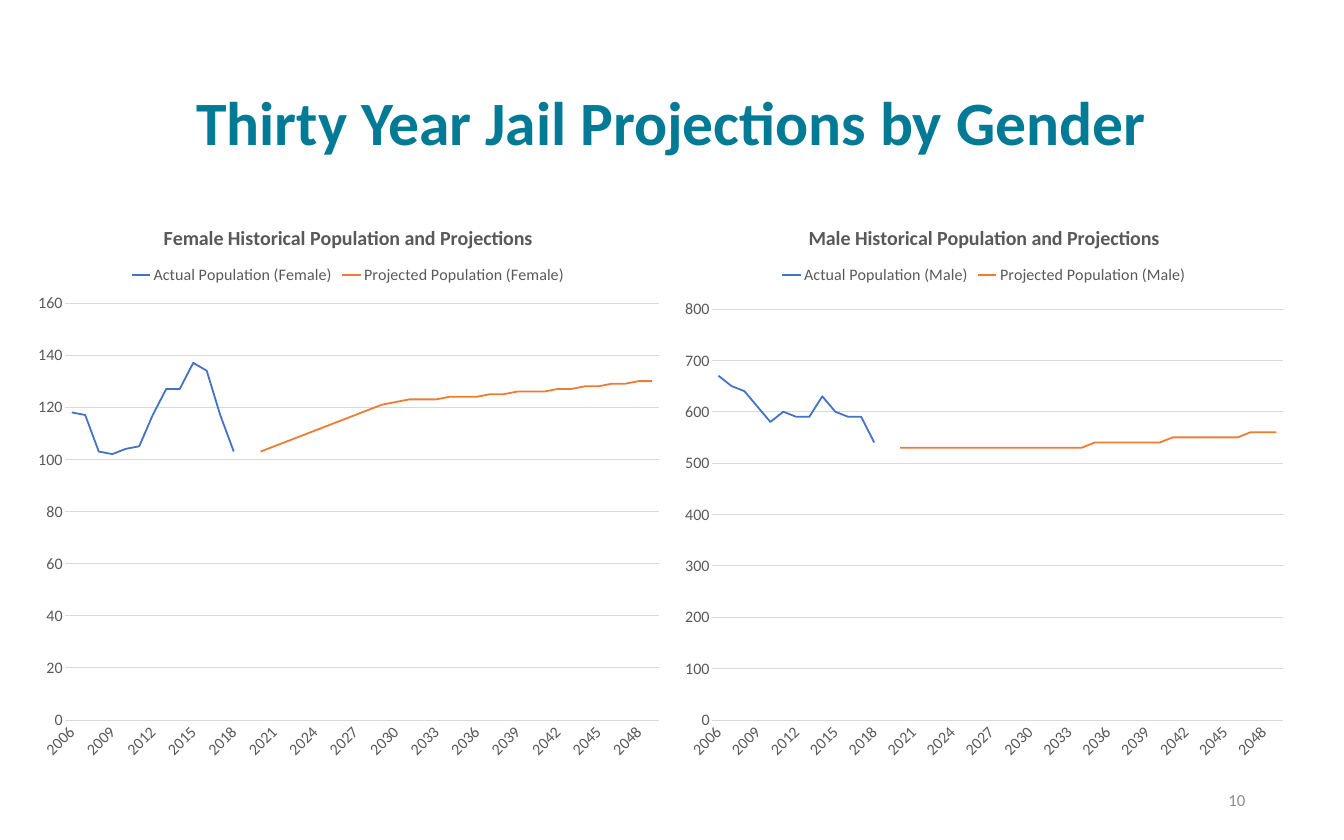
from lxml import etree
from pptx import Presentation
from pptx import util as u
from pptx.chart import data as chart_data
from pptx.dml import color
from pptx.enum import chart as chart_enum
from pptx.enum import text
from pptx.oxml import ns

PX = 15875  # EMU per px
FONT = "Calibri"
COLORS = {
    "title": "007A95",
    "label": "595959",
    "grid": "D9D9D9",
    "number": "8C8C8C",
    "actual": "4472C4",
    "projected": "ED7D31",
}
YEARS = range(2006, 2050)
FIRST_PROJECTED = 2020


def style_font(font, size, color_name, bold=False):
    font.name = FONT
    font.size = u.Pt(size)
    font.bold = bold
    font.color.rgb = color.RGBColor.from_string(COLORS[color_name])


def add_text(words, box, size, color_name, alignment, bold=False):
    shape = slide.shapes.add_textbox(*[length * PX for length in box])
    frame = shape.text_frame
    frame.word_wrap = True
    frame.vertical_anchor = text.MSO_ANCHOR.MIDDLE
    frame.text = words
    paragraph = frame.paragraphs[0]
    paragraph.alignment = alignment
    paragraph.line_spacing = 0.9
    style_font(paragraph.runs[0].font, size, color_name, bold)


presentation = Presentation()
presentation.slide_width = 1344 * PX
presentation.slide_height = 840 * PX
slide = presentation.slides.add_slide(presentation.slide_layouts[6])

# Title
add_text("Thirty Year Jail Projections by Gender", (92, 45, 1159, 162),
         77, "title", text.PP_ALIGN.CENTER, bold=True)

# Chart and plot boxes are left, top, width, height in px
charts = [
    {
        "gender": "Male", "box": (672, 207, 624, 563), "plot": (712, 309, 571, 411),
        "maximum": 800, "step": 100,
        "actual": [670, 650, 640, 610, 580, 600, 590, 590, 630, 600, 590, 590, 540],
        "projected": [530] * 15 + [540] * 6 + [550] * 6 + [560] * 3,
    },
    {
        "gender": "Female", "box": (24, 207, 648, 563), "plot": (65, 303, 594, 417),
        "maximum": 160, "step": 20,
        "actual": [118, 117, 103, 102, 104, 105, 117, 127, 127, 137, 134, 117, 103],
        "projected": [*range(103, 122, 2), 122, 123, 123, 123, 124, 124, 124, 125, 125, 126,
                      126, 126, 127, 127, 128, 128, 129, 129, 130, 130],
    },
]

for item in charts:
    # Data
    population = chart_data.CategoryChartData()
    population.categories = [str(year) for year in YEARS]
    gap = [None] * (FIRST_PROJECTED - YEARS[0])
    actual = item["actual"] + [None] * (len(YEARS) - len(item["actual"]))
    population.add_series(f"Actual Population ({item['gender']})", actual)
    population.add_series(f"Projected Population ({item['gender']})", gap + item["projected"])
    frame = slide.shapes.add_chart(chart_enum.XL_CHART_TYPE.LINE,
                                   *[length * PX for length in item["box"]], population)
    chart = frame.chart
    chart.font.name = FONT

    # Chart title and legend
    chart.has_title = True
    chart.chart_title.include_in_layout = False
    title = chart.chart_title.text_frame
    title.text = f"{item['gender']} Historical Population and Projections"
    style_font(title.paragraphs[0].runs[0].font, 25, "label", bold=True)
    chart.has_legend = True
    chart.legend.position = chart_enum.XL_LEGEND_POSITION.TOP
    chart.legend.include_in_layout = False
    style_font(chart.legend.font, 20, "label")

    # Lines
    chart.plots[0].vary_by_categories = False
    for series, color_name in zip(chart.plots[0].series, ("actual", "projected")):
        series.smooth = False
        series.format.line.width = u.Pt(2.25)
        series.format.line.color.rgb = color.RGBColor.from_string(COLORS[color_name])

    # Axes
    years, values = chart.category_axis, chart.value_axis
    for axis in (years, values):
        axis.major_tick_mark = axis.minor_tick_mark = chart_enum.XL_TICK_MARK.NONE
        style_font(axis.tick_labels.font, 20, "label")
    values.minimum_scale = 0
    values.maximum_scale = item["maximum"]
    values.major_unit = item["step"]
    values.format.line.fill.background()
    for line in (years.format.line, values.major_gridlines.format.line):
        line.width = u.Pt(0.75)
        line.color.rgb = color.RGBColor.from_string(COLORS["grid"])

    # Slanted label for every third year
    years_xml = years._element
    years_xml.find(ns.qn("c:txPr")).find(ns.qn("a:bodyPr")).set("rot", "-2700000")
    skip = etree.Element(ns.qn("c:tickLblSkip"), val="3")
    years_xml.find(ns.qn("c:noMultiLvlLbl")).addprevious(skip)

    # Plot position as fractions of the chart
    left, top, width, height = item["box"]
    plot_left, plot_top, plot_width, plot_height = item["plot"]
    settings = {
        "layoutTarget": "inner", "xMode": "edge", "yMode": "edge",
        "x": (plot_left - left) / width, "y": (plot_top - top) / height,
        "w": plot_width / width, "h": plot_height / height,
    }
    plot_area = chart._chartSpace.chart.plotArea
    for old_layout in plot_area.findall(ns.qn("c:layout")):
        plot_area.remove(old_layout)
    layout = etree.Element(ns.qn("c:layout"))
    manual = etree.SubElement(layout, ns.qn("c:manualLayout"))
    for name, value in settings.items():
        etree.SubElement(manual, ns.qn(f"c:{name}"), val=str(value))
    plot_area.insert(0, layout)

# Slide number
add_text("10", (949, 779, 302, 45), 21, "number", text.PP_ALIGN.RIGHT)

presentation.save("out.pptx")
